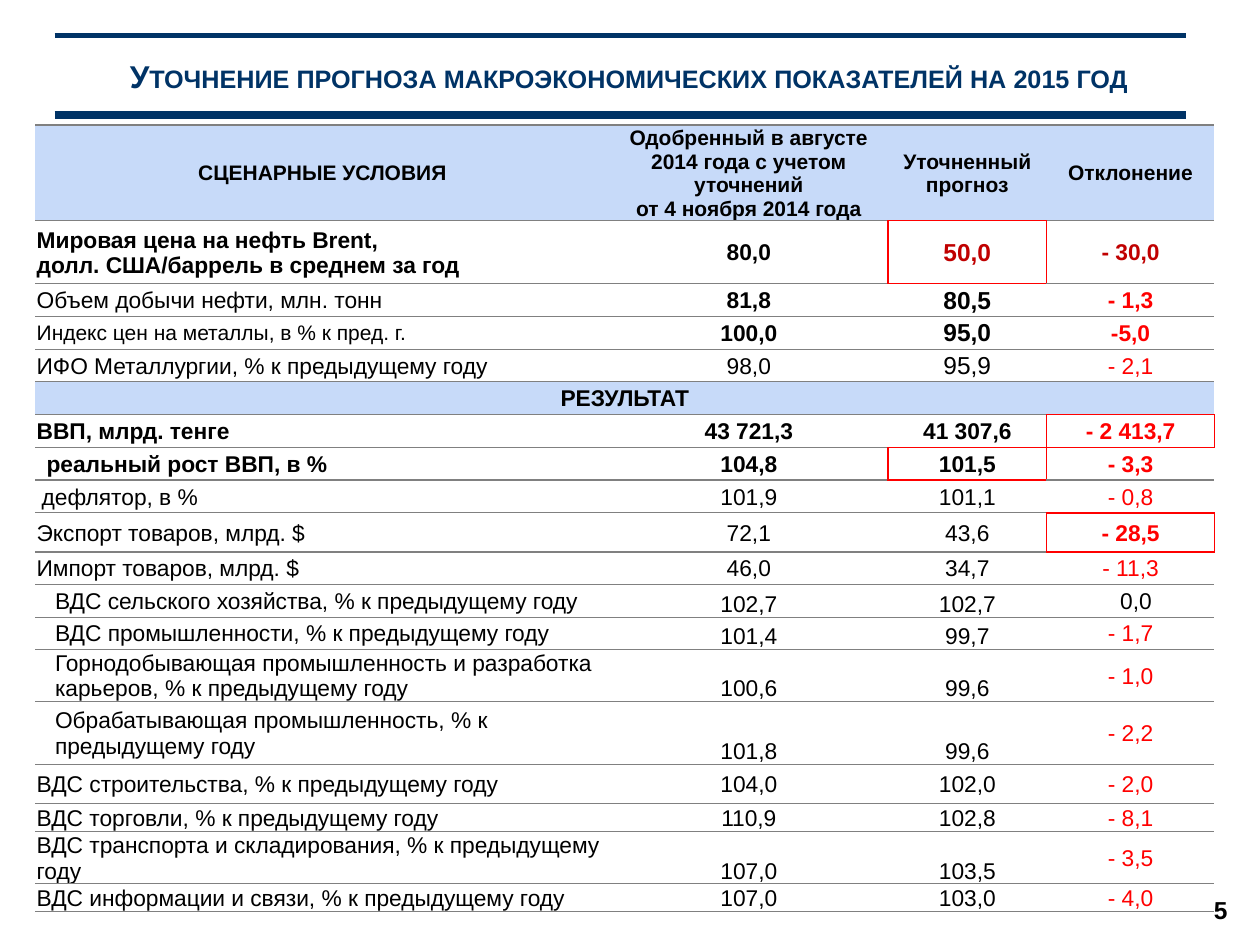
from lxml.etree import SubElement
from pptx import Presentation
from pptx.dml.color import RGBColor
from pptx.enum.shapes import MSO_CONNECTOR, MSO_SHAPE
from pptx.enum.text import MSO_ANCHOR as ANCHOR, MSO_AUTO_SIZE, PP_ALIGN as ALIGN
from pptx.oxml.ns import qn
from pptx.util import Cm, Pt

COLORS = {"navy": "003366", "black": "000000", "white": "FFFFFF", "header": "C7DAF9",
          "grid": "808080", "red": "FF0000", "dark_red": "C00000"}

COL_WIDTHS = (11.58, 5.61, 3.2, 3.38)
HEADERS = ("СЦЕНАРНЫЕ УСЛОВИЯ",
           "Одобренный в августе 2014 года с учетом уточнений\nот 4 ноября 2014 года",
           "Уточненный прогноз", "Отклонение")

# Label, approved, revised, deviation, row height in cm
ROWS = [
    ("Мировая цена на нефть Brent,\vдолл. США/баррель в среднем за год", "80,0", "50,0", "- 30,0", 1.27),
    ("Объем добычи нефти, млн. тонн", "81,8", "80,5", "- 1,3", 0.66),
    ("Индекс цен на металлы, в % к пред. г.", "100,0", "95,0", "-5,0", 0.66),
    ("ИФО Металлургии, % к предыдущему году", "98,0", "95,9", "- 2,1", 0.66),
    ("РЕЗУЛЬТАТ", "", "", "", 0.66),
    ("ВВП, млрд. тенге", "43 721,3", "41 307,6", "- 2 413,7", 0.66),
    ("реальный рост ВВП, в %", "104,8", "101,5", "- 3,3", 0.66),
    ("дефлятор, в %", "101,9", "101,1", "- 0,8", 0.66),
    ("Экспорт товаров, млрд. $", "72,1", "43,6", "- 28,5", 0.79),
    ("Импорт товаров, млрд. $", "46,0", "34,7", "- 11,3", 0.66),
    ("ВДС сельского хозяйства, % к предыдущему году", "102,7", "102,7", "0,0", 0.66),
    ("ВДС промышленности, % к предыдущему году", "101,4", "99,7", "- 1,7", 0.64),
    ("Горнодобывающая промышленность и разработка карьеров, % к предыдущему году",
     "100,6", "99,6", "- 1,0", 0.66),
    ("Обрабатывающая промышленность, % к предыдущему году", "101,8", "99,6", "- 2,2", 1.27),
    ("ВДС строительства, % к предыдущему году", "104,0", "102,0", "- 2,0", 0.79),
    ("ВДС торговли, % к предыдущему году", "110,9", "102,8", "- 8,1", 0.56),
    ("ВДС транспорта и складирования, % к предыдущему году", "107,0", "103,5", "- 3,5", 0.56),
    ("ВДС информации и связи, % к предыдущему году", "107,0", "103,0", "- 4,0", 0.56),
]

# Row and column positions that get special treatment (row 0 is the header)
RESULT_ROW = 5
RED_BOXES = {(1, 2), (6, 3), (7, 2), (9, 3)}
BOLD_ROWS = {0, 1, RESULT_ROW, 6, 7}
BOLD_VALUE_ROWS = {2, 3}
BOTTOM_ROWS = {11, 12, 13, 14, 16, 17, 18}
LABEL_INSETS = {7: 0.23, 8: 0.13, 11: 0.4, 12: 0.4, 13: 0.4, 14: 0.4}
SIDES = {"a:lnL": (0, -1), "a:lnR": (0, 1), "a:lnT": (-1, 0), "a:lnB": (1, 0)}


def rgb(name):
    return RGBColor.from_string(COLORS[name])


def write(tf, text, size=13, color="black", bold=False, align=ALIGN.CENTER):
    tf.word_wrap = True
    tf.text = text
    for p in tf.paragraphs:
        p.alignment = align
        for r in p.runs:
            f = r.font
            f.name, f.size, f.bold = "Arial", Pt(size), bold
            f.color.rgb = rgb(color)


def set_insets(frame, left=0.03, right=0.03, top=0.03, bottom=0):
    frame.margin_left, frame.margin_right = Cm(left), Cm(right)
    frame.margin_top, frame.margin_bottom = Cm(top), Cm(bottom)


def add_rule(s, x, y, w, weight):
    line = s.shapes.add_connector(MSO_CONNECTOR.STRAIGHT, Cm(x), Cm(y), Cm(x + w), Cm(y))
    line.line.color.rgb = rgb("navy")
    line.line.width = Pt(weight)
    SubElement(line._element.spPr, qn("a:effectLst"))


def add_heading(s, x, y, w, h):
    """Title between two horizontal rules."""
    add_rule(s, x, y, w, 3)
    add_rule(s, x, y + h, w, 4.5)
    title = s.shapes.title
    title.left, title.top, title.width, title.height = Cm(x), Cm(y + 0.08), Cm(w + 0.1), Cm(h - 0.15)
    tf = title.text_frame
    write(tf, "Уточнение прогноза макроэкономических показателей на 2015 год", 18, "navy", True)
    tf.auto_size = MSO_AUTO_SIZE.NONE
    tf.vertical_anchor = ANCHOR.MIDDLE
    p = tf.paragraphs[0]
    p.space_before = Pt(6)
    p._p.get_or_add_pPr().set("marL", str(Cm(0.25)))
    p.runs[0]._r.get_or_add_rPr().set("cap", "small")


def add_page_number(s, x, y, w, h):
    sp = s.shapes.add_shape(MSO_SHAPE.RECTANGLE, Cm(x), Cm(y), Cm(w), Cm(h))
    sp.shadow.inherit = False
    sp.fill.solid()
    sp.fill.fore_color.rgb = rgb("white")
    sp.line.fill.background()
    write(sp.text_frame, "5", 14, bold=True)
    sp.text_frame.vertical_anchor = ANCHOR.MIDDLE


def set_borders(cell, row, col):
    """Grey horizontal lines; red on every side that touches a highlighted cell."""
    tc_pr = cell._tc.get_or_add_tcPr()
    for tag, (dr, dc) in SIDES.items():
        red = bool({(row, col), (row + dr, col + dc)} & RED_BOXES)
        ln = SubElement(tc_pr, qn(tag), w=str(Pt(1 if red else 0.75)))
        if red or dr:
            fill = SubElement(ln, qn("a:solidFill"))
            SubElement(fill, qn("a:srgbClr"), val=COLORS["red" if red else "grid"])
        else:
            SubElement(ln, qn("a:noFill"))


def text_format(row, col, text):
    """Size, colour, weight and alignment of one table cell."""
    size, color = 13, "black"
    if row == 0 or (row, col) == (3, 0):
        size = 12
    elif col == 2 and row <= 4:
        size = 14
    if row == 1 and col >= 2:
        color = "dark_red"
    elif text.startswith("-"):
        color = "red"
    bold = row in BOLD_ROWS or (row in BOLD_VALUE_ROWS and col > 0) or (row, col) == (9, 3)
    centred = col > 0 or row in (0, RESULT_ROW)
    return dict(size=size, color=color, bold=bold, align=ALIGN.CENTER if centred else ALIGN.LEFT)


def add_indicator_table(s, x, y, w, h):
    rows = [(*HEADERS, 1.47)] + ROWS
    table = s.shapes.add_table(len(rows), len(COL_WIDTHS), Cm(x), Cm(y), Cm(w), Cm(h)).table
    table.first_row = table.horz_banding = False
    for column, width in zip(table.columns, COL_WIDTHS):
        column.width = Cm(width)
    for i, (*texts, height) in enumerate(rows):
        table.rows[i].height = Cm(height)
        for j, text in enumerate(texts):
            cell = table.cell(i, j)
            set_borders(cell, i, j)
            cell.fill.solid()
            cell.fill.fore_color.rgb = rgb("header" if i in (0, RESULT_ROW) else "white")
            left = LABEL_INSETS.get(i, 0.03) if j == 0 else 0.25 if text == "0,0" else 0.03
            set_insets(cell, left)
            low = i in BOTTOM_ROWS and j in (1, 2)
            cell.vertical_anchor = ANCHOR.BOTTOM if low else ANCHOR.MIDDLE
            if text:
                write(cell.text_frame, text, **text_format(i, j, text))
            else:
                cell.text_frame.paragraphs[0].font.size = Pt(12)
    table.cell(RESULT_ROW, 0).merge(table.cell(RESULT_ROW, 3))


def main():
    prs = Presentation()
    prs.slide_width, prs.slide_height = Cm(25.4), Cm(19.05)
    s = prs.slides.add_slide(prs.slide_layouts[5])
    add_heading(s, 1.1, 0.72, 22.8, 1.6)
    add_page_number(s, 23.85, 17.63, 1.52, 1.4)
    add_indicator_table(s, 0.71, 2.52, sum(COL_WIDTHS), 16.15)
    prs.save("out.pptx")


if __name__ == "__main__":
    main()
